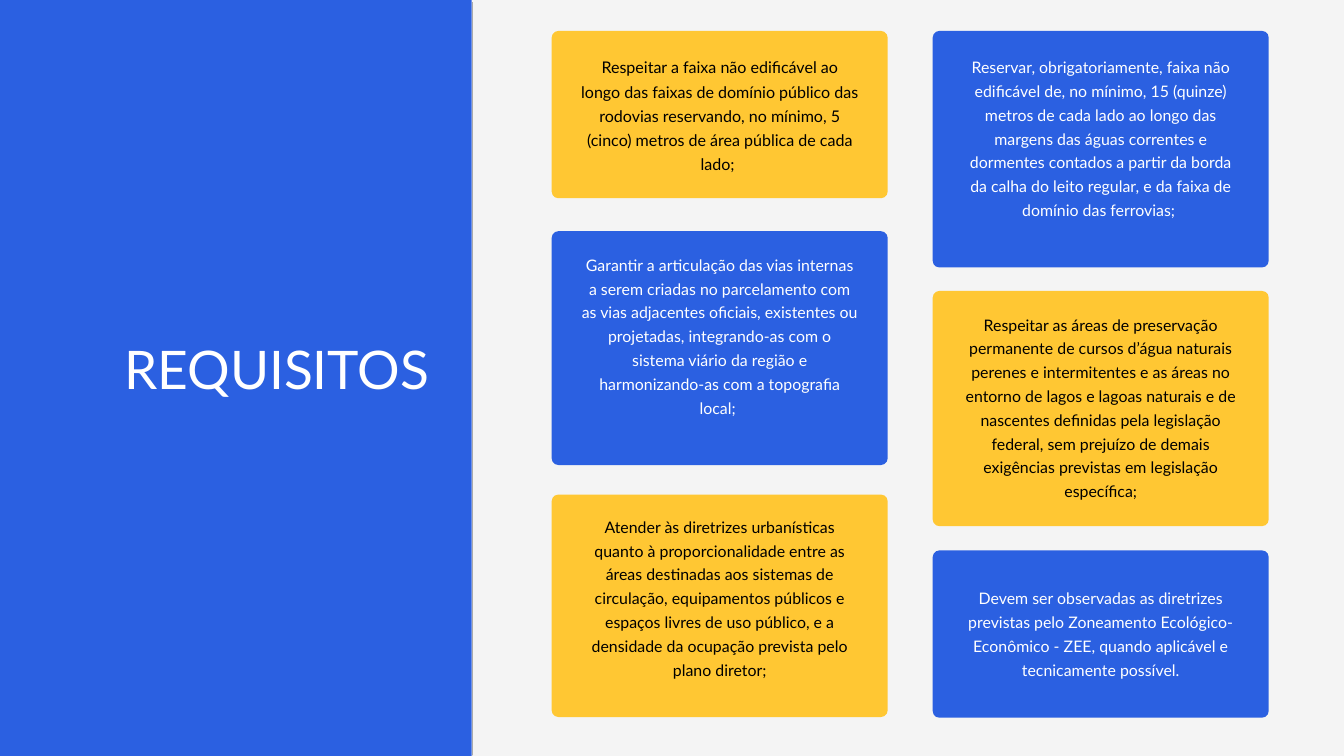
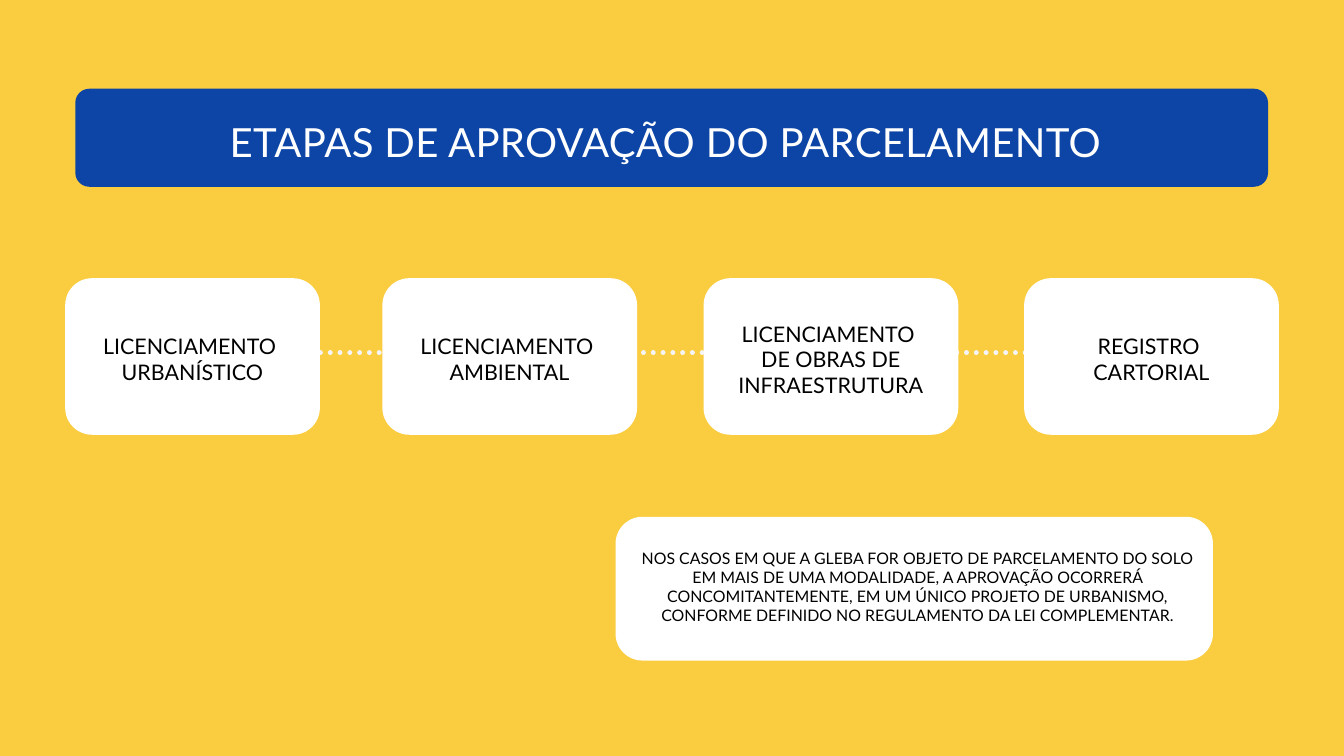
from dataclasses import dataclass

from lxml import etree
from pptx import Presentation
from pptx import util as u
from pptx.dml.color import RGBColor
from pptx.enum import dml, shapes, text
from pptx.oxml import ns


@dataclass(frozen=True)
class Theme:
    font: str = "Lato"
    # Colours
    blue: str = "2B60E1"
    navy: str = "0C45A6"
    amber: str = "FFC733"
    yellow: str = "FACC40"
    grey: str = "F4F4F4"
    white: str = "FFFFFF"
    black: str = "000000"
    # Type sizes
    heading: float = 57
    band_title: float = 43
    step: float = 23
    body: float = 17
    # Corner radii in inches
    card_corner: float = 0.1
    band_corner: float = 0.21
    step_corner: float = 0.4


def write_text(shape, content, *, font, size, color, leading=1.2,
               align=text.PP_ALIGN.CENTER, tracking=None):
    """Fill a shape with one paragraph per line of content."""
    frame = shape.text_frame
    frame.word_wrap = True
    frame.auto_size = text.MSO_AUTO_SIZE.NONE
    frame.vertical_anchor = text.MSO_ANCHOR.TOP
    frame.margin_left = frame.margin_right = 0
    frame.margin_top = frame.margin_bottom = 0
    frame.text = content
    for paragraph in frame.paragraphs:
        paragraph.alignment = align
        paragraph.line_spacing = u.Pt(round(size * leading, 1))
        paragraph.space_before = u.Pt(0)
        for run in paragraph.runs:
            run.font.name = font
            run.font.size = u.Pt(size)
            run.font.color.rgb = RGBColor.from_string(color)
            if tracking:
                run.font._element.set("spc", str(int(tracking * 100)))


class Deck:
    def __init__(self, theme):
        self.theme = theme
        self.presentation = Presentation()
        self.presentation.slide_width = u.Inches(20)
        self.presentation.slide_height = u.Inches(11.25)
        self.slide = None

    def new_slide(self, background):
        title_only = self.presentation.slide_layouts[5]
        self.slide = self.presentation.slides.add_slide(title_only)
        fill = self.slide.background.fill
        fill.solid()
        fill.fore_color.rgb = RGBColor.from_string(background)

    def title(self, content, left, top, width, height, **style):
        shape = self.slide.shapes.title
        shape.left, shape.top = u.Inches(left), u.Inches(top)
        shape.width, shape.height = u.Inches(width), u.Inches(height)
        write_text(shape, content, font=self.theme.font,
                   color=self.theme.white, **style)
        # Bring the title in front of the band behind it
        shape.element.getparent().append(shape.element)

    def label(self, content, left, top, width, height, **style):
        box = self.slide.shapes.add_textbox(
            u.Inches(left), u.Inches(top), u.Inches(width), u.Inches(height))
        write_text(box, content, font=self.theme.font, **style)

    def box(self, left, top, width, height, fill, corner):
        shape = self.slide.shapes.add_shape(
            shapes.MSO_SHAPE.ROUNDED_RECTANGLE, u.Inches(left), u.Inches(top),
            u.Inches(width), u.Inches(height))
        shape.adjustments[0] = corner / min(width, height)
        shape.shadow.inherit = False
        shape.fill.solid()
        shape.fill.fore_color.rgb = RGBColor.from_string(fill)
        shape.line.fill.background()

    def line(self, x1, y1, x2, y2, color, weight, dotted=False, opacity=100):
        connector = self.slide.shapes.add_connector(
            shapes.MSO_CONNECTOR.STRAIGHT, u.Inches(x1), u.Inches(y1),
            u.Inches(x2), u.Inches(y2))
        connector.line.width = u.Pt(weight)
        connector.line.color.rgb = RGBColor.from_string(color)
        properties = connector.element.spPr
        if dotted:
            connector.line.dash_style = dml.MSO_LINE.ROUND_DOT
            properties.find(ns.qn("a:ln")).set("cap", "rnd")
        if opacity < 100:
            color_node = next(properties.iter(ns.qn("a:srgbClr")))
            alpha = etree.SubElement(color_node, ns.qn("a:alpha"))
            alpha.set("val", str(opacity * 1000))
        etree.SubElement(properties, ns.qn("a:effectLst"))


# Each requirement: card top, card height, text top, text height, size, wording
REQUIREMENTS = {
    8.21: [
        (0.46, 2.49, 0.79, 2.11, 17.2,
         "Respeitar a faixa não edificável ao longo das faixas de domínio "
         "público das rodovias reservando, no mínimo, 5 (cinco) metros de "
         "área pública de cada lado; "),
        (3.44, 3.48, 3.73, 3.19, Theme.body,
         "Garantir a articulação das vias internas a serem criadas no "
         "parcelamento com as vias adjacentes oficiais, existentes ou "
         "projetadas, integrando-as com o sistema viário da região e "
         "harmonizando-as com a topografia local; "),
        (7.36, 3.31, 7.63, 3.19, Theme.body,
         "Atender às diretrizes urbanísticas quanto à proporcionalidade "
         "entre as áreas destinadas aos sistemas de circulação, equipamentos "
         "públicos e espaços livres de uso público, e a densidade da "
         "ocupação prevista pelo plano diretor;"),
    ],
    13.88: [
        (0.46, 3.52, 0.79, 3.19, Theme.body,
         "Reservar, obrigatoriamente, faixa não edificável de, no mínimo, 15 "
         "(quinze) metros de cada lado ao longo das margens das águas "
         "correntes e dormentes contados a partir da borda da calha do leito "
         "regular, e da faixa de domínio das ferrovias; "),
        (4.33, 3.5, 4.62, 3.21, Theme.body,
         "Respeitar as áreas de preservação permanente de cursos d’água "
         "naturais perenes e intermitentes e as áreas no entorno de lagos e "
         "lagoas naturais e de nascentes definidas pela legislação federal, "
         "sem prejuízo de demais exigências previstas em legislação "
         "específica;"),
        (8.19, 2.49, 8.69, 1.42, Theme.body,
         "Devem ser observadas as diretrizes previstas pelo Zoneamento "
         "Ecológico-Econômico - ZEE, quando aplicável e tecnicamente "
         "possível."),
    ],
}

# Each step: card left, text width, wording
STEPS = [
    (0.97, 2.74, "LICENCIAMENTO \nURBANÍSTICO"),
    (5.69, 2.84, "LICENCIAMENTO \nAMBIENTAL"),
    (10.47, 2.8, "LICENCIAMENTO \nDE OBRAS DE\nINFRAESTRUTURA"),
    (15.24, 1.81, "REGISTRO \nCARTORIAL"),
]


def build_requirements(deck):
    theme = deck.theme
    deck.new_slide(theme.grey)

    # Side panel with the title
    deck.line(7.03, 11.24, 7.03, 0.03, theme.black, 0.75, opacity=30)
    deck.box(-0.54, -0.43, 7.56, 11.84, theme.blue, theme.card_corner)
    deck.title("REQUISITOS", 1.85, 5, 4.8, 0.96, size=theme.heading,
               align=text.PP_ALIGN.LEFT)

    # Cards in two columns, colours alternating like a chessboard
    card_width = 5
    schemes = [(theme.amber, theme.black), (theme.blue, theme.white)]
    for column, (left, cards) in enumerate(REQUIREMENTS.items()):
        for row, card in enumerate(cards):
            top, height, text_top, text_height, size, wording = card
            fill, ink = schemes[(column + row) % 2]
            text_width = 4.34 if text_height < 2 else 4.15
            deck.box(left, top, card_width, height, fill, theme.card_corner)
            deck.label(wording, left + (card_width - text_width) / 2, text_top,
                       text_width, text_height, size=size, color=ink,
                       leading=1.5)


def build_steps(deck):
    theme = deck.theme
    deck.new_slide(theme.yellow)

    # Title band
    deck.box(1.12, 1.32, 17.75, 1.46, theme.navy, theme.band_corner)
    deck.title("ETAPAS DE APROVAÇÃO DO PARCELAMENTO", 1.88, 1.68, 16.05, 0.76,
               size=theme.band_title, leading=1.3, tracking=0.4)

    # Steps joined by a dotted line
    deck.line(4.04, 5.25, 17.13, 5.25, theme.grey, 5.25, dotted=True)
    card_width, line_height, text_middle = 3.79, 0.38, 5.34
    for left, text_width, wording in STEPS:
        text_height = line_height * len(wording.split("\n"))
        deck.box(left, 4.14, card_width, 2.33, theme.white, theme.step_corner)
        deck.label(wording, left + (card_width - text_width) / 2,
                   text_middle - text_height / 2, text_width, text_height,
                   size=theme.step, color=theme.black)

    # Closing note
    deck.box(9.16, 7.69, 8.89, 2.14, theme.white, theme.step_corner)
    deck.label("NOS CASOS EM QUE A GLEBA FOR OBJETO DE PARCELAMENTO DO SOLO "
               "EM MAIS DE UMA MODALIDADE, A APROVAÇÃO OCORRERÁ "
               "CONCOMITANTEMENTE, EM UM ÚNICO PROJETO DE URBANISMO, CONFORME "
               "DEFINIDO NO REGULAMENTO DA LEI COMPLEMENTAR.",
               9.49, 8.17, 8.33, 1.15, size=theme.body, color=theme.black)


def main():
    deck = Deck(Theme())
    build_requirements(deck)
    build_steps(deck)
    deck.presentation.save("out.pptx")


if __name__ == "__main__":
    main()
